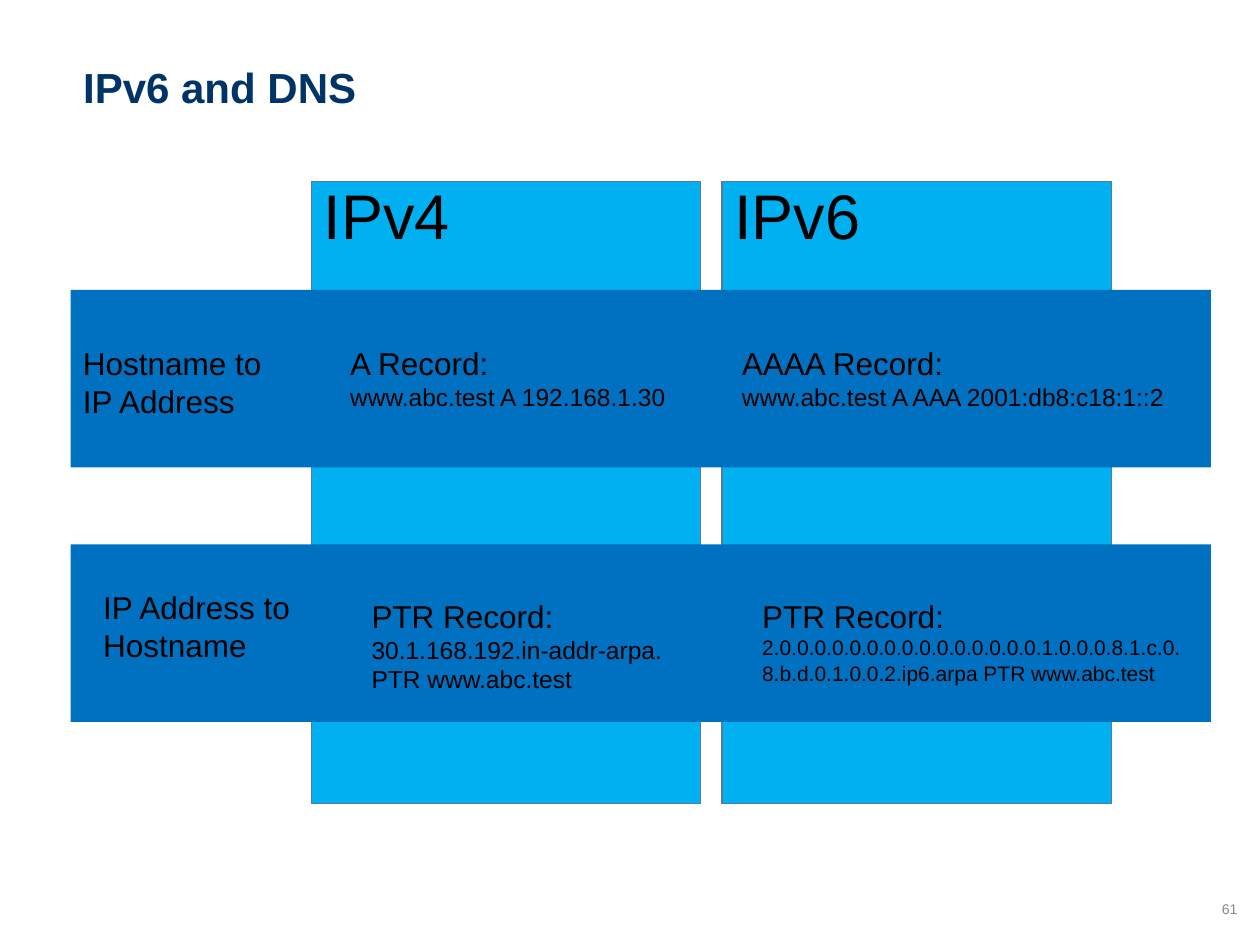
from pptx import Presentation
from pptx.dml.color import RGBColor
from pptx.enum.shapes import MSO_SHAPE
from pptx.enum.text import MSO_ANCHOR, PP_ALIGN
from pptx.util import Inches, Pt


def rgb(value):
    return RGBColor.from_string(value)


class SlideBuilder:
    font = "Arial"
    ink = "000000"
    title_color = "003366"
    muted = "878787"
    column_fill = "00B0F0"
    column_line = "5279A9"
    band_fill = "0070C0"

    def __init__(self, slide):
        self.s = slide

    def set_lines(self, tf, lines, color=ink, bold=False, align=PP_ALIGN.LEFT,
                  anchor=MSO_ANCHOR.TOP, spacing=None):
        tf.word_wrap = True
        tf.vertical_anchor = anchor
        tf.text = "\n".join(text for text, size in lines)
        for p, (text, size) in zip(tf.paragraphs, lines):
            p.alignment = align
            p.line_spacing = spacing
            for r in p.runs:
                r.font.name = self.font
                r.font.size = Pt(size)
                r.font.bold = bold
                r.font.color.rgb = rgb(color)

    def title(self, text, x, y, w, h):
        sp = self.s.shapes.title
        sp.left, sp.top, sp.width, sp.height = map(Inches, (x, y, w, h))
        self.set_lines(sp.text_frame, [(text, 24)], self.title_color, bold=True,
                       anchor=MSO_ANCHOR.BOTTOM, spacing=0.9)

    def rect(self, x, y, w, h, fill):
        sp = self.s.shapes.add_shape(MSO_SHAPE.RECTANGLE, *map(Inches, (x, y, w, h)))
        sp.shadow.inherit = False
        sp.fill.solid()
        sp.fill.fore_color.rgb = rgb(fill)
        sp.line.fill.background()
        return sp

    def column(self, text, x):
        sp = self.rect(x, 1.44, 3.09, 4.94, self.column_fill)
        sp.line.color.rgb = rgb(self.column_line)
        sp.line.width = Pt(0.75)
        self.set_lines(sp.text_frame, [(text, 36)], spacing=0.85)

    def band(self, y):
        self.rect(0.56, y, 9.05, 1.41, self.band_fill)

    def text(self, lines, x, y, w, h, **style):
        sp = self.s.shapes.add_textbox(*map(Inches, (x, y, w, h)))
        self.set_lines(sp.text_frame, lines, **style)


def main():
    prs = Presentation()
    prs.slide_width, prs.slide_height = Inches(10), Inches(7.5)
    b = SlideBuilder(prs.slides.add_slide(prs.slide_layouts[5]))

    b.title("IPv6 and DNS", 0.56, 0.24, 7.98, 0.7)
    for name, x in (("IPv6", 5.73), ("IPv4", 2.47)):
        b.column(name, x)
    for y in (2.3, 4.32):
        b.band(y)

    b.text([("Hostname to IP Address", 18)], 0.56, 2.68, 1.75, 0.71)
    b.text([("A Record:", 18), ("www.abc.test A 192.168.1.30", 14)],
           2.68, 2.68, 2.88, 0.64)
    b.text([("AAAA Record:", 18), ("www.abc.test A AAA 2001:db8:c18:1::2", 14)],
           5.79, 2.68, 3.82, 0.64)

    b.text([("IP Address to", 18), ("Hostname", 18)], 0.72, 4.62, 1.75, 0.71)
    b.text([("PTR Record:", 18),
            ("30.1.168.192.in-addr-arpa. PTR www.abc.test", 14)],
           2.85, 4.69, 2.88, 0.88)
    b.text([("PTR Record:", 18),
            ("2.0.0.0.0.0.0.0.0.0.0.0.0.0.0.0.1.0.0.0.8.1.c.0.", 12),
            ("8.b.d.0.1.0.0.2.ip6.arpa PTR www.abc.test", 12)],
           5.95, 4.69, 3.65, 0.81)

    b.text([("61", 8)], 9.49, 7.08, 0.43, 0.27, color=b.muted,
           align=PP_ALIGN.RIGHT, anchor=MSO_ANCHOR.MIDDLE)
    prs.save("out.pptx")


if __name__ == "__main__":
    main()
